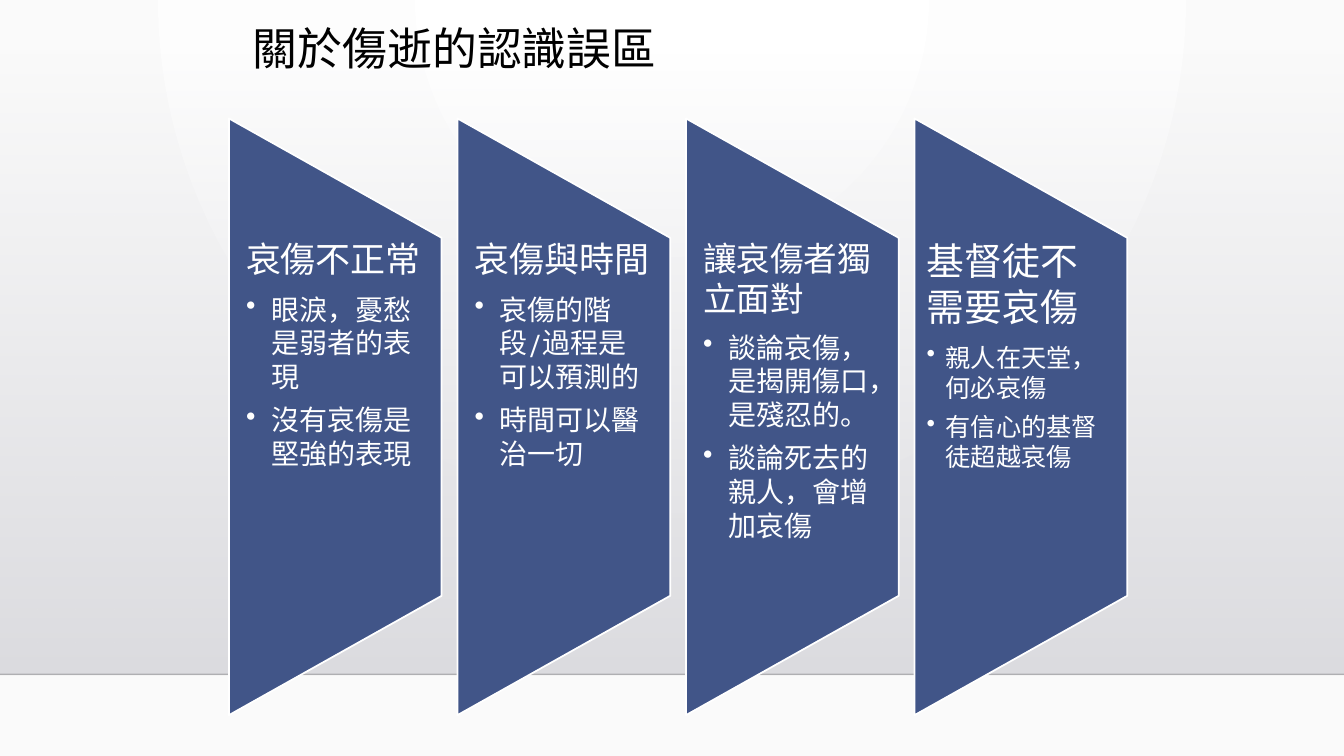
from dataclasses import dataclass

from lxml.etree import SubElement
from pptx import Presentation
from pptx.dml.color import RGBColor
from pptx.enum.shapes import MSO_CONNECTOR, MSO_SHAPE
from pptx.enum.text import MSO_ANCHOR, PP_ALIGN
from pptx.oxml.ns import qn
from pptx.util import Inches, Pt


@dataclass(frozen=True)
class Theme:
    font: str = "TeX Gyre Adventor"
    panel: str = "415588"
    white: str = "FFFFFF"
    black: str = "000000"
    floor_line: str = "000001"
    page_edge: str = "FAFAFA"
    wall_top: str = "DCDCE0"
    wall_bottom: str = "DEDEE2"
    title_size: int = 32
    space_after: float = 0.35  # share of the type size


THEME = Theme()
SLIDE_W, SLIDE_H = 13.33, 7.5
FLOOR_Y = 6.69
PANEL_LEFT, PANEL_PITCH = 2.27, 6.8 / 3
PANEL_W, PANEL_H, PANEL_MID_Y = 2.11, 5.92, 4.135
TEXT_TOP, TEXT_H = 2.36, 3.55

# heading, heading size, bullets, bullet size, side inset, bullet indent
PANELS = [
    ("哀傷不正常", 25,
     ["眼淚，憂愁是弱者的表現", "沒有哀傷是堅強的表現"], 20, 0.17, 0.25),
    ("哀傷與時間", 25,
     ["哀傷的階段/過程是可以預測的", "時間可以醫治一切"], 20, 0.17, 0.25),
    ("讓哀傷者獨立面對", 24,
     ["談論哀傷，是揭開傷口，是殘忍的。", "談論死去的親人，會增加哀傷"], 20, 0.17, 0.25),
    ("基督徒不需要哀傷", 27,
     ["親人在天堂，何必哀傷", "有信心的基督徒超越哀傷"], 18, 0.12, 0.19),
]


def add_xml(parent, tag, **attrs):
    return SubElement(parent, qn(tag), {k: str(v) for k, v in attrs.items()})


def set_gradient(fill, element, stops):
    """Give fill the (percent, colour, opacity) stops; return its XML, still without direction."""
    fill.gradient()
    grad = next(element.iter(qn("a:gradFill")))
    for child in list(grad):
        grad.remove(child)
    gs_list = add_xml(grad, "a:gsLst")
    for percent, color, opacity in stops:
        gs = add_xml(gs_list, "a:gs", pos=percent * 1000)
        clr = add_xml(gs, "a:srgbClr", val=color)
        if opacity < 100:
            add_xml(clr, "a:alpha", val=opacity * 1000)
    return grad


def paint_backdrop(slide):
    """Radial page glow, a wall that fades in downwards, and the floor line."""
    glow = set_gradient(slide.background.fill, slide.element,
                        [(0, THEME.white, 100), (100, THEME.page_edge, 100)])
    circle = add_xml(glow, "a:path", path="circle")
    add_xml(circle, "a:fillToRect", l=43000, t=0, r=43000, b=100000)

    wall_top = 0.51
    wall = slide.shapes.add_shape(MSO_SHAPE.RECTANGLE, 0, Inches(wall_top),
                                  Inches(SLIDE_W), Inches(FLOOR_Y - wall_top))
    wall.shadow.inherit = False
    wall.line.fill.background()
    fade = set_gradient(wall.fill, wall.element,
                        [(0, THEME.wall_top, 0), (100, THEME.wall_bottom, 100)])
    add_xml(fade, "a:lin", ang=90 * 60000, scaled=0)

    floor = slide.shapes.add_connector(MSO_CONNECTOR.STRAIGHT, 0, Inches(FLOOR_Y),
                                       Inches(SLIDE_W), Inches(FLOOR_Y))
    floor.line.width = Pt(1)
    floor.line.color.rgb = RGBColor.from_string(THEME.floor_line)
    add_xml(next(floor.element.iter(qn("a:srgbClr"))), "a:alpha", val=20000)
    add_xml(floor.element.spPr, "a:effectLst")


def add_text_box(slide, left, top, width, height, inset_x, inset_y):
    tf = slide.shapes.add_textbox(Inches(left), Inches(top),
                                  Inches(width), Inches(height)).text_frame
    tf.word_wrap = True
    tf.vertical_anchor = MSO_ANCHOR.TOP
    tf.margin_left = tf.margin_right = Inches(inset_x)
    tf.margin_top = tf.margin_bottom = Inches(inset_y)
    return tf


def write(p, text, size, color, indent=0):
    """Fill paragraph p; a non-zero indent makes it a bullet."""
    p.text = text
    p.alignment = PP_ALIGN.LEFT
    if indent:
        p.level = 1
        pPr = p._p.get_or_add_pPr()
        pPr.set("marL", str(Inches(indent)))
        pPr.set("indent", str(-Inches(indent)))
        add_xml(pPr, "a:buChar", char="•")
    p.font.name = THEME.font
    p.font.size = Pt(size)
    p.font.color.rgb = RGBColor.from_string(color)
    add_xml(p.font._element, "a:ea", typeface=THEME.font)


def add_title(slide, text):
    tf = add_text_box(slide, 2.41, 0.22, 10.28, 0.83, 0.1, 0.05)
    p = tf.paragraphs[0]
    p.line_spacing = 0.9
    write(p, text, THEME.title_size, THEME.black)


def add_panel(slide, left, heading, heading_size, bullets, bullet_size, inset, indent):
    # The preset lies on its side, so its width is the height of the panel.
    sp = slide.shapes.add_shape(
        MSO_SHAPE.FLOWCHART_MANUAL_OPERATION,
        Inches(left + (PANEL_W - PANEL_H) / 2), Inches(PANEL_MID_Y - PANEL_W / 2),
        Inches(PANEL_H), Inches(PANEL_W))
    sp.rotation = 270
    sp.shadow.inherit = False
    sp.fill.solid()
    sp.fill.fore_color.rgb = RGBColor.from_string(THEME.panel)
    sp.line.color.rgb = RGBColor.from_string(THEME.white)
    sp.line.width = Pt(1.25)

    tf = add_text_box(slide, left, TEXT_TOP, PANEL_W, TEXT_H, inset, 0)
    p = tf.paragraphs[0]
    p.space_after = Pt(heading_size * THEME.space_after)
    write(p, heading, heading_size, THEME.white)
    for bullet in bullets:
        p = tf.add_paragraph()
        p.space_after = Pt(bullet_size * THEME.space_after)
        write(p, bullet, bullet_size, THEME.white, indent)


def main():
    prs = Presentation()
    prs.slide_width, prs.slide_height = Inches(SLIDE_W), Inches(SLIDE_H)
    slide = prs.slides.add_slide(prs.slide_layouts[6])
    paint_backdrop(slide)
    add_title(slide, "關於傷逝的認識誤區")
    for i, panel in enumerate(PANELS):
        add_panel(slide, PANEL_LEFT + i * PANEL_PITCH, *panel)
    prs.save("out.pptx")


if __name__ == "__main__":
    main()
